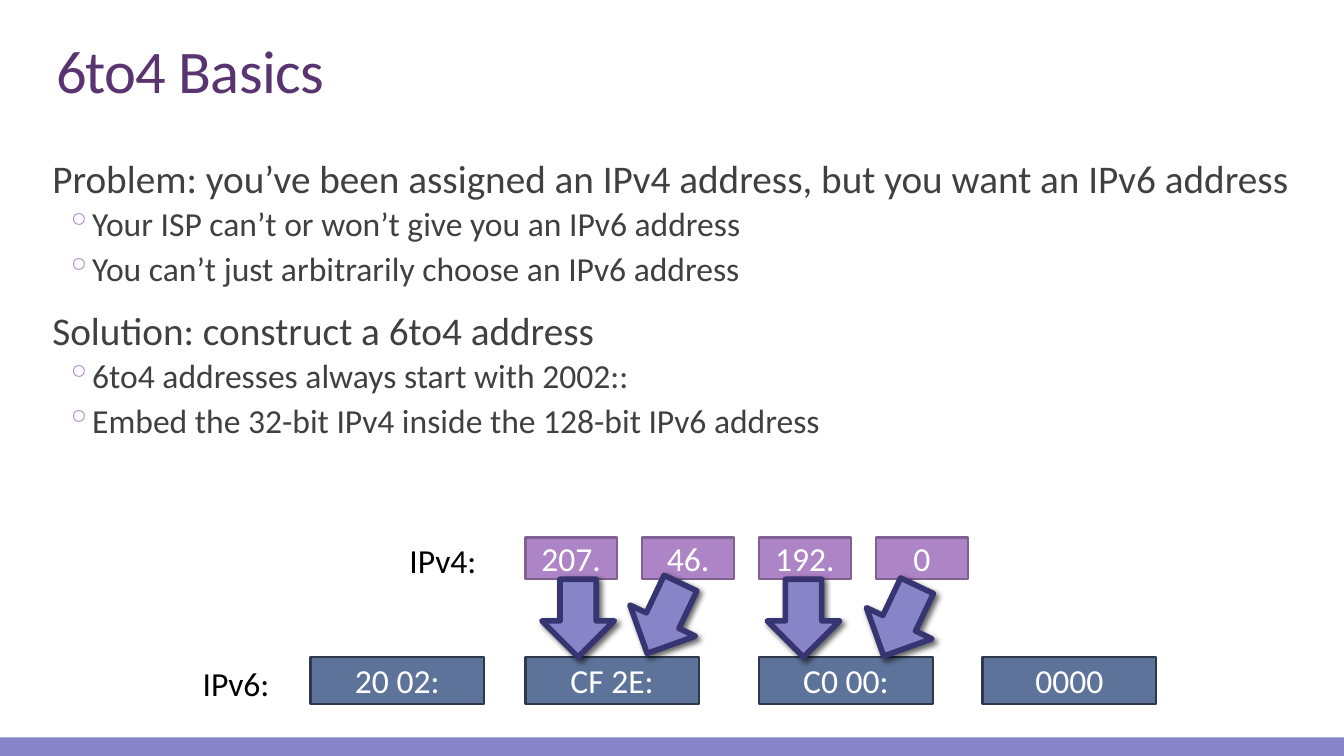
from dataclasses import dataclass

from lxml import etree
from pptx import Presentation
from pptx import util as u
from pptx.dml.color import RGBColor
from pptx.enum import shapes, text
from pptx.oxml import ns

Cm, Pt = u.Cm, u.Pt


@dataclass(frozen=True)
class Theme:
    font: str = "Calibri"
    title: str = "5A3471"
    body: str = "404040"
    label: str = "000000"
    white: str = "FFFFFF"
    accent: str = "8784C7"
    accent_line: str = "373472"
    v4: str = "AD84C6"
    v4_line: str = "806292"
    v6: str = "5D739A"
    v6_line: str = "2E394D"
    title_size: float = 32.4
    point_size: float = 21
    text_size: float = 18


T = Theme()


def write(p, words, size=T.text_size, color=T.white, align=None,
          line=None, before=0, after=0, left=0, bullet=None, spacing=None):
    """Put words in paragraph p with the given format."""
    p.alignment, p.line_spacing = align, line
    p.space_before, p.space_after = Pt(before), Pt(after)
    r = p.add_run()
    r.text = words
    r.font.name, r.font.size = T.font, Pt(size)
    r.font.color.rgb = RGBColor.from_string(color)
    if spacing:
        r.font._element.set("spc", str(int(spacing * 100)))
    pPr = p._p.get_or_add_pPr()
    pPr.set("marL", str(Cm(left)))
    if bullet:
        pPr.set("indent", str(Cm(-0.38)))
        clr = etree.SubElement(pPr, ns.qn("a:buClr"))
        etree.SubElement(clr, ns.qn("a:srgbClr"), val=T.v4)
        etree.SubElement(pPr, ns.qn("a:buChar"), char=bullet)


def add_shape(s, kind, x, y, w, h, fill, line=None, width=1.25):
    """Add a flat preset shape, measured in centimetres."""
    sp = s.shapes.add_shape(kind, Cm(x), Cm(y), Cm(w), Cm(h))
    sp.shadow.inherit = False
    sp.fill.solid()
    sp.fill.fore_color.rgb = RGBColor.from_string(fill)
    if line:
        sp.line.color.rgb = RGBColor.from_string(line)
        sp.line.width = Pt(width)
    else:
        sp.line.fill.background()
    return sp


prs = Presentation()
prs.slide_width, prs.slide_height = Cm(25.4), Cm(14.29)
s = prs.slides.add_slide(prs.slide_layouts[6])
RECT = shapes.MSO_SHAPE.RECTANGLE

# Footer bar
add_shape(s, RECT, 0, 13.94, 25.4, 0.35, T.accent)

# Title
tf = s.shapes.add_textbox(Cm(0.81), Cm(0.61), Cm(24.08), Cm(1.52)).text_frame
tf.word_wrap = True
tf.vertical_anchor = text.MSO_ANCHOR.BOTTOM
write(tf.paragraphs[0], "6to4 Basics", size=T.title_size, color=T.title,
      line=0.85, spacing=-0.4)

# Problem and solution
points = [
    ("Problem: you’ve been assigned an IPv4 address, but you want an IPv6 address",
     ["Your ISP can’t or won’t give you an IPv6 address",
      "You can’t just arbitrarily choose an IPv6 address"]),
    ("Solution: construct a 6to4 address",
     ["6to4 addresses always start with 2002::",
      "Embed the 32-bit IPv4 inside the 128-bit IPv6 address"]),
]
tf = s.shapes.add_textbox(Cm(0.81), Cm(2.9), Cm(24.08), Cm(9.98)).text_frame
tf.word_wrap = True
tf.margin_left = tf.margin_right = 0
p = tf.paragraphs[0]
for i, (point, details) in enumerate(points):
    if i:
        p = tf.add_paragraph()
    write(p, point, size=T.point_size, color=T.body, line=0.9,
          before=9, after=1.5, left=0.18)
    for detail in details:
        write(tf.add_paragraph(), detail, color=T.body, line=0.9,
              before=1.5, after=3, left=0.81, bullet="◦")

# Address rows: y, width, height, fill, line, cells as (x, words)
v4_cells = [(9.93 + 2.21 * i, words)
            for i, words in enumerate(["207.", "46.", "192.", "0"])]
v6_cells = [(5.87, "20 02:"), (9.93, "CF 2E:"), (14.35, "C0 00:"), (18.57, "0000")]
rows = [
    (10.16, 1.73, 0.79, T.v4, T.v4_line, v4_cells),
    (12.42, 3.28, 0.89, T.v6, T.v6_line, v6_cells),
]
for y, w, h, fill, line, cells in rows:
    for x, words in cells:
        sp = add_shape(s, RECT, x, y, w, h, fill, line)
        tf = sp.text_frame
        tf.vertical_anchor = text.MSO_ANCHOR.MIDDLE
        write(tf.paragraphs[0], words, align=text.PP_ALIGN.CENTER)

# Row labels
for x, y, words in [(7.49, 10.08, "IPv4:"), (3.58, 12.4, "IPv6:")]:
    tf = s.shapes.add_textbox(Cm(x), Cm(y), Cm(1.8), Cm(1.02)).text_frame
    tf.word_wrap = False
    write(tf.paragraphs[0], words, color=T.label)

# Arrows from IPv4 to IPv6, with a soft shadow
for x, y, turn in [(10.24, 10.95, 180), (14.5, 10.95, 180),
                   (11.86, 10.95, 205.4), (16.33, 11, 205.4)]:
    sp = add_shape(s, shapes.MSO_SHAPE.UP_ARROW, x, y, 1.37, 1.47,
                   T.accent, T.accent_line, 3)
    sp.rotation = turn
    effects = sp._element.spPr.find(ns.qn("a:effectLst"))
    shadow = etree.SubElement(effects, ns.qn("a:outerShdw"), blurRad=str(Pt(3)),
                              dist=str(Pt(2)), dir="2700000", rotWithShape="0")
    clr = etree.SubElement(shadow, ns.qn("a:srgbClr"), val=T.label)
    etree.SubElement(clr, ns.qn("a:alpha"), val="60000")

prs.save("out.pptx")
